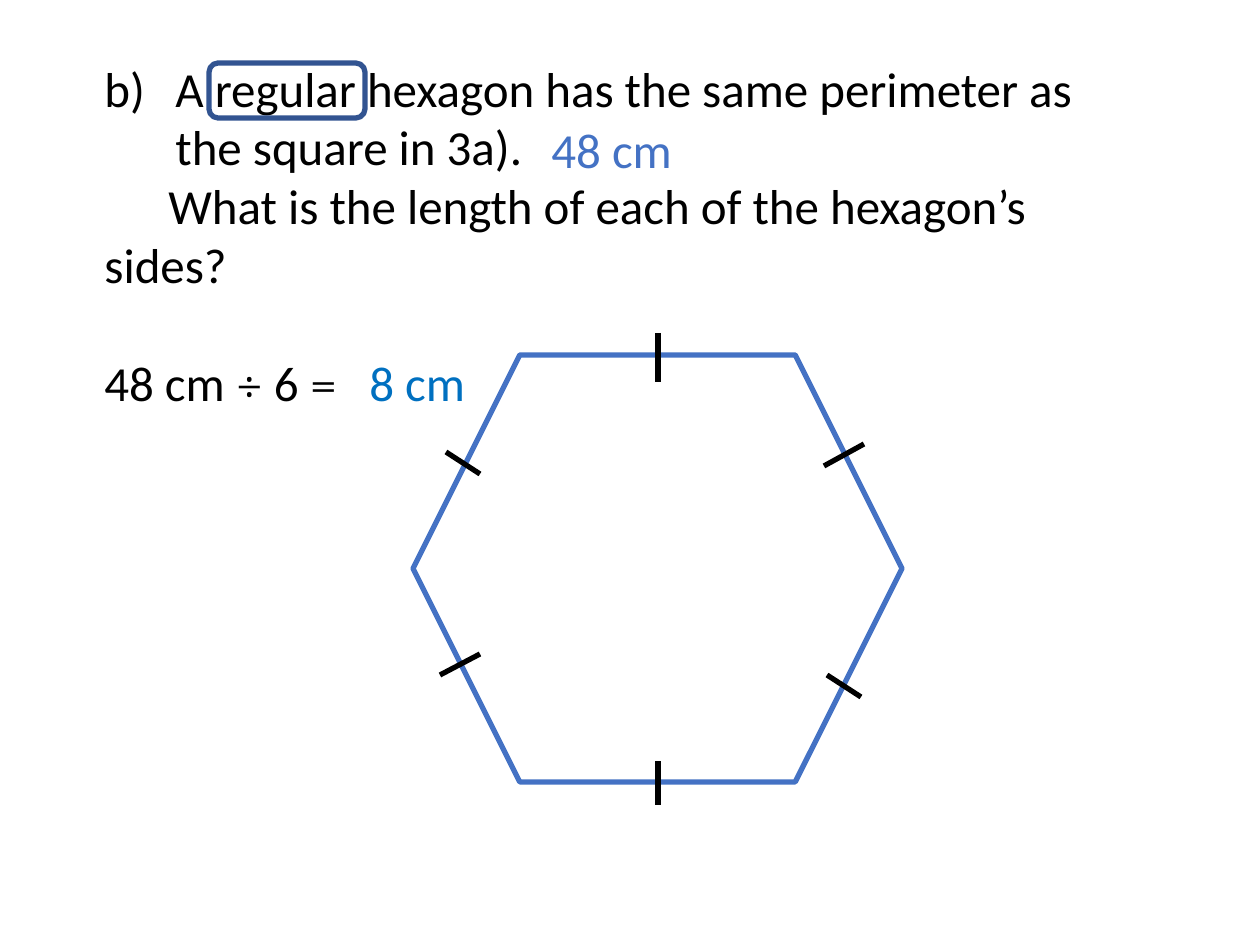
"""Build a slide that finds the side length of a regular hexagon."""
from lxml import etree
from pptx import Presentation
from pptx import util as u
from pptx.dml.color import RGBColor
from pptx.enum import shapes
from pptx.oxml.ns import qn

COLORS = {"ink": "000000", "blue": "4472C4", "answer": "0070C0", "frame": "325491"}
TICKS = [
    (658, 333, 658, 382),
    (446, 452, 480, 474),
    (827, 675, 861, 697),
    (824, 466, 864, 444),
    (440, 675, 480, 654),
    (658, 805, 658, 761),
]


def px(length):
    return u.Emu(round(length * 914400 / 126))


class Board:
    def __init__(self, slide, font="Calibri", size=28, weight=3):
        self.slide = slide
        self.font = font
        self.size = size
        self.weight = weight

    def color(self, name):
        return RGBColor.from_string(COLORS[name])

    def style_paragraph(self, paragraph, color="ink"):
        paragraph.font.name = self.font
        paragraph.font.size = u.Pt(self.size)
        paragraph.font.color.rgb = self.color(color)

    def text(self, left, top, width, height, words="", color="ink"):
        box = self.slide.shapes.add_textbox(px(left), px(top), px(width), px(height))
        box.text_frame.word_wrap = True
        paragraph = box.text_frame.paragraphs[0]
        paragraph.text = words
        self.style_paragraph(paragraph, color)
        return box.text_frame

    def question(self, left, top, width, height, item, start, prompt):
        frame = self.text(left, top, width, height)
        first, second = frame.paragraphs[0], frame.add_paragraph()
        first.text, second.text = item, prompt
        for paragraph, margin, indent in ((first, 71, -71), (second, 0, 64)):
            properties = paragraph._p.get_or_add_pPr()
            properties.set("marL", str(px(margin)))
            properties.set("indent", str(px(indent)))
        number = etree.Element(qn("a:buAutoNum"), type="alphaLcParenR", startAt=str(start))
        first._p.pPr.insert(0, number)
        self.style_paragraph(second)

    def equation(self, left, top, width, height, parts):
        paragraph = self.text(left, top, width, height).paragraphs[0]
        for words, font in parts:
            run = paragraph.add_run()
            run.text = words
            run.font.name = font

    def outline(self, kind, left, top, width, height, color):
        shape = self.slide.shapes.add_shape(kind, px(left), px(top), px(width), px(height))
        shape.shadow.inherit = False
        shape.fill.background()
        shape.line.color.rgb = self.color(color)
        shape.line.width = u.Pt(self.weight)

    def tick(self, *ends):
        line = self.slide.shapes.add_connector(shapes.MSO_CONNECTOR.STRAIGHT, *map(px, ends))
        line.line.color.rgb = self.color("ink")
        line.line.width = u.Pt(self.weight)
        etree.SubElement(line._element.spPr, qn("a:effectLst"))


def main():
    presentation = Presentation()
    presentation.slide_width, presentation.slide_height = u.Inches(10), u.Inches(7.5)
    board = Board(presentation.slides.add_slide(presentation.slide_layouts[6]))

    board.question(
        92, 52, 1063, 251,
        "A regular hexagon has the same perimeter as the square in 3a).", 2,
        "What is the length of each of the hexagon’s sides?",
    )
    board.text(539, 113, 205, 72, "48 cm", "blue")
    board.outline(shapes.MSO_SHAPE.HEXAGON, 413, 355, 489, 427, "blue")
    for ends in TICKS:
        board.tick(*ends)
    board.equation(
        92, 346, 301, 72,
        [("48 cm ", "Calibri"), ("÷", "Cambria"), (" 6 ", "Calibri"), ("=", "Cambria")],
    )
    board.text(357, 346, 205, 72, "8 cm", "answer")
    board.outline(shapes.MSO_SHAPE.ROUNDED_RECTANGLE, 209, 63, 156, 55, "frame")
    presentation.save("out.pptx")


if __name__ == "__main__":
    main()
